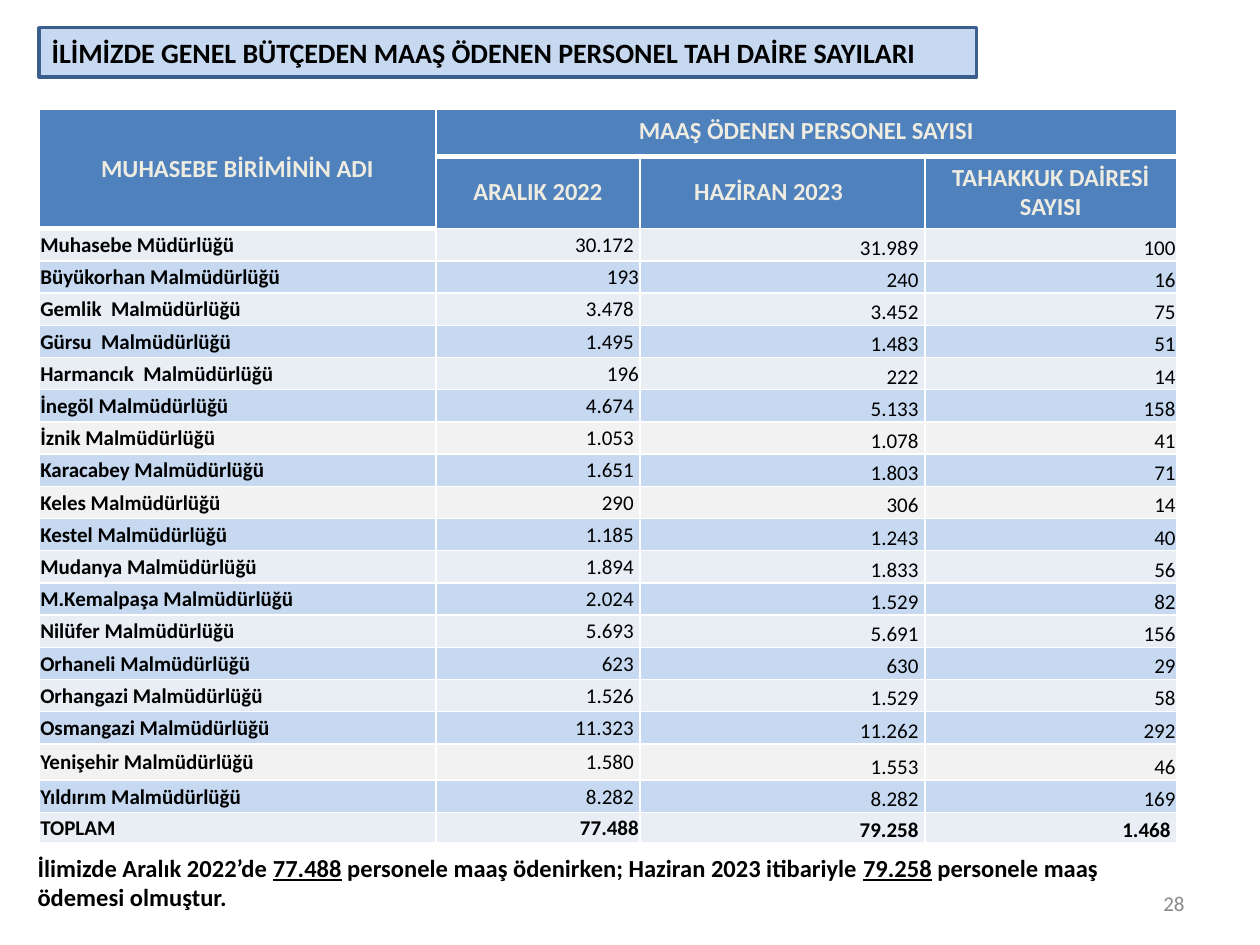
from dataclasses import dataclass

from lxml.etree import SubElement as Sub
from pptx import Presentation
from pptx.dml.color import RGBColor as Rgb
from pptx.enum.text import MSO_ANCHOR as Anchor, MSO_AUTO_SIZE as Fit, PP_ALIGN as Align
from pptx.oxml.ns import qn
from pptx.util import Inches, Pt


@dataclass(frozen=True)
class Theme:
    font: str = "Calibri"
    ink: str = "000000"
    head: str = "4F81BD"
    pale: str = "EEECE1"
    blue: str = "C6D9F1"
    mist: str = "E9EDF4"
    grey: str = "F2F2F2"
    edge: str = "3A5F8C"
    rule: str = "FFFFFF"
    page: str = "898989"
    title: int = 16
    lead: int = 14
    body: int = 12


T = Theme()
WIDE, HIGH = Inches(10), Inches(7.5)

COLS = (3.15, 1.62, 2.26, 2)
HEADS = ("ARALIK 2022", "HAZİRAN 2023", "TAHAKKUK DAİRESİ SAYISI")
DATA = (
    ("Muhasebe Müdürlüğü", "30.172", "31.989", "100"),
    ("Büyükorhan Malmüdürlüğü", "193", "240", "16"),
    ("Gemlik  Malmüdürlüğü", "3.478", "3.452", "75"),
    ("Gürsu  Malmüdürlüğü", "1.495", "1.483", "51"),
    ("Harmancık  Malmüdürlüğü", "196", "222", "14"),
    ("İnegöl Malmüdürlüğü", "4.674", "5.133", "158"),
    ("İznik Malmüdürlüğü", "1.053", "1.078", "41"),
    ("Karacabey Malmüdürlüğü", "1.651", "1.803", "71"),
    ("Keles Malmüdürlüğü", "290", "306", "14"),
    ("Kestel Malmüdürlüğü", "1.185", "1.243", "40"),
    ("Mudanya Malmüdürlüğü", "1.894", "1.833", "56"),
    ("M.Kemalpaşa Malmüdürlüğü", "2.024", "1.529", "82"),
    ("Nilüfer Malmüdürlüğü", "5.693", "5.691", "156"),
    ("Orhaneli Malmüdürlüğü", "623", "630", "29"),
    ("Orhangazi Malmüdürlüğü", "1.526", "1.529", "58"),
    ("Osmangazi Malmüdürlüğü", "11.323", "11.262", "292"),
    ("Yenişehir Malmüdürlüğü", "1.580", "1.553", "46"),
    ("Yıldırım Malmüdürlüğü", "8.282", "8.282", "169"),
    ("TOPLAM", "77.488", "79.258", "1.468"),
)
# Row heights, counted in plain body rows
ROWS = (1.45, 2.25) + (1,) * 16 + (1.13, 1, 0.94)
GREY = {6, 8, 16}
FLUSH = {"193", "196", "77.488"}


def box(x, y, w, h):
    """Turn percentages of the slide into left, top, width and height."""
    return [int(side * part / 100) for side, part in
            zip((WIDE, HIGH, WIDE, HIGH), (x, y, w, h))]


def style(para, size, color=T.ink, bold=False, align=Align.LEFT):
    para.alignment = align
    font = para.font
    font.name, font.size, font.bold = T.font, Pt(size), bold
    font.color.rgb = Rgb.from_string(color)


def paint(fill, color):
    fill.solid()
    fill.fore_color.rgb = Rgb.from_string(color)


def add_title(slide, text):
    """Format the title placeholder as a rounded, outlined banner."""
    title = slide.shapes.title
    title.left, title.top, title.width, title.height = box(3.1, 2.93, 74.4, 5.2)
    shape = Sub(title.element.spPr, qn("a:prstGeom"), prst="roundRect")
    Sub(shape, qn("a:avLst"))
    paint(title.fill, T.blue)
    title.line.color.rgb = Rgb.from_string(T.edge)
    title.line.width = Pt(2)
    frame = title.text_frame
    frame.text = text
    frame.auto_size, frame.word_wrap = Fit.NONE, True
    frame.vertical_anchor = Anchor.MIDDLE
    style(frame.paragraphs[0], T.title, bold=True)


def add_text(slide, place, anchor=Anchor.TOP):
    """Add an empty wrapping text box and return its frame."""
    frame = slide.shapes.add_textbox(*place).text_frame
    frame.word_wrap, frame.vertical_anchor = True, anchor
    return frame


def add_note(slide, parts):
    """Write the parts in turn, underlining every second one."""
    para = add_text(slide, box(2, 89.6, 90.6, 7.6)).paragraphs[0]
    style(para, T.lead, bold=True)
    for num, part in enumerate(parts):
        run = para.add_run()
        run.text = part
        if num % 2:
            run.font.underline = True


def add_page(slide, num):
    frame = add_text(slide, box(71.7, 92.93, 23.3, 5.33), Anchor.MIDDLE)
    frame.text = num
    style(frame.paragraphs[0], T.body, T.page, align=Align.RIGHT)


def rule(cell, top, low):
    """Draw the cell's borders, with the given widths above and below."""
    props = cell._tc.get_or_add_tcPr()
    for side, wide in zip("LRTB", (1, 1, top, low)):
        line = Sub(props, qn(f"a:ln{side}"), w=str(Pt(wide)))
        fill = Sub(line, qn("a:solidFill"))
        Sub(fill, qn("a:srgbClr"), val=T.rule)


def fill_cell(cell, text, fill, pads, anchor, top=1, low=1, **look):
    rule(cell, top, low)
    paint(cell.fill, fill)
    cell.text = text
    cell.vertical_anchor = anchor
    (cell.margin_left, cell.margin_top,
     cell.margin_right, cell.margin_bottom) = map(Inches, pads)
    style(cell.text_frame.paragraphs[0], **look)


def head_cell(cell, text, anchor=Anchor.MIDDLE, right=0.1, **rules):
    fill_cell(cell, text, T.head, (0.1, 0.05, right, 0.05), anchor, **rules,
              size=T.lead, color=T.pale, bold=True, align=Align.CENTER)


def body_row(grid, num, vals):
    row, total = num + 2, num == len(DATA) - 1
    fill = T.blue if num % 2 else T.grey if num in GREY else T.mist
    for col, val in enumerate(vals):
        tight = col == 0 or val in FLUSH or (col == 3 and not total)
        fill_cell(grid.cell(row, col), val, fill,
                  (0.01, 0.01, 0.01 if tight else 0.05, 0),
                  Anchor.MIDDLE if col < 2 else Anchor.BOTTOM,
                  top=3 if num == col == 0 else 1,
                  size=T.body, bold=total or col == 0,
                  align=Align.RIGHT if col else Align.LEFT)


def add_grid(slide):
    place = box(3.1, 11.6, 90.3, 77.6)
    grid = slide.shapes.add_table(len(ROWS), len(COLS), *place).table
    for col, part in zip(grid.columns, COLS):
        col.width = int(place[2] * part / sum(COLS))
    for row, part in zip(grid.rows, ROWS):
        row.height = int(place[3] * part / sum(ROWS))
    grid.cell(0, 0).merge(grid.cell(1, 0))
    grid.cell(0, 1).merge(grid.cell(0, 3))
    head_cell(grid.cell(0, 0), "MUHASEBE BİRİMİNİN ADI", low=3)
    head_cell(grid.cell(0, 1), "MAAŞ ÖDENEN PERSONEL SAYISI", Anchor.TOP, low=3)
    for col, text in enumerate(HEADS, 1):
        head_cell(grid.cell(1, col), text, right=0.32 if col == 2 else 0.1, top=3)
    for num, vals in enumerate(DATA):
        body_row(grid, num, vals)


def main():
    deck = Presentation()
    deck.slide_width, deck.slide_height = WIDE, HIGH
    slide = deck.slides.add_slide(deck.slide_layouts[5])
    add_title(slide, "İLİMİZDE GENEL BÜTÇEDEN MAAŞ ÖDENEN PERSONEL TAH DAİRE SAYILARI")
    add_grid(slide)
    add_note(slide, ("İlimizde Aralık 2022’de ", "77.488",
                     " personele maaş ödenirken; Haziran 2023 itibariyle ",
                     "79.258", " personele maaş ödemesi olmuştur."))
    add_page(slide, "28")
    deck.save("out.pptx")


if __name__ == "__main__":
    main()
